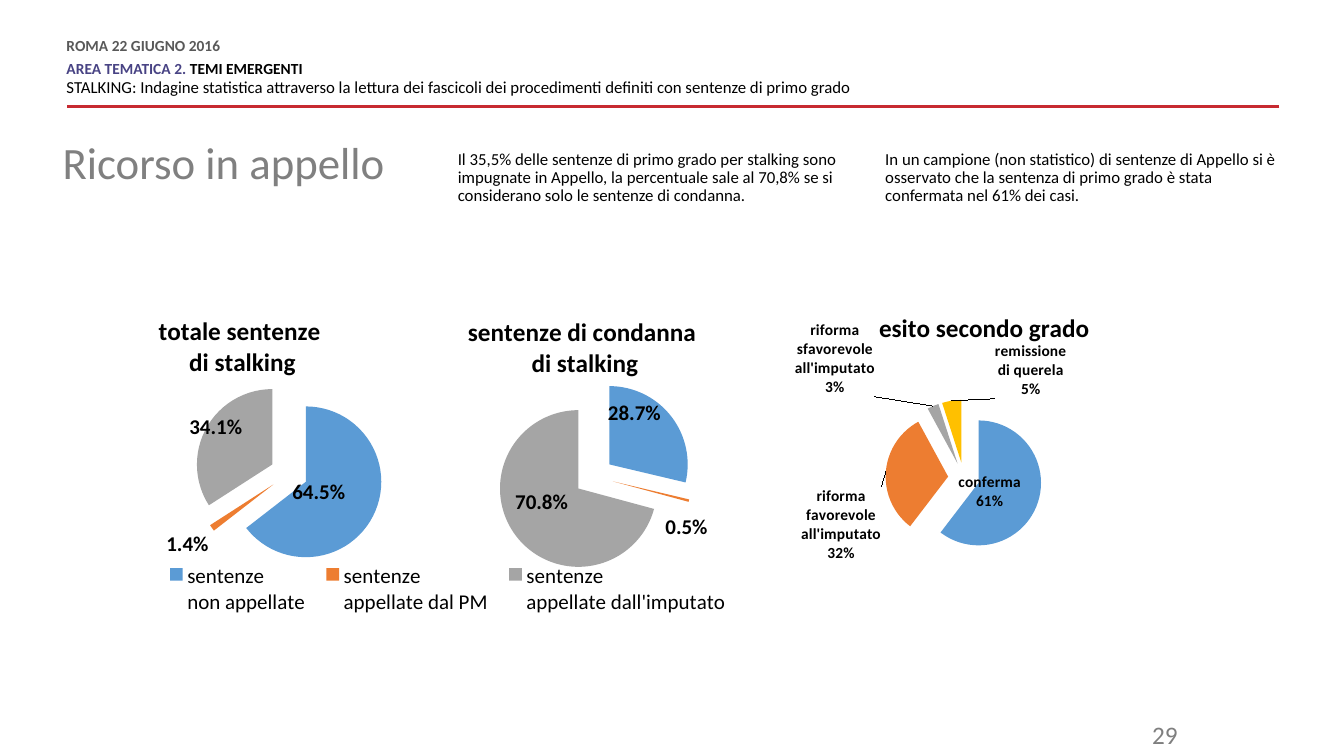
"""Build the slide on appeals against stalking sentences, with three exploded pies."""
import copy
import math

import pptx
import pptx.chart.data
import pptx.dml.color
import pptx.enum.chart
import pptx.enum.shapes
import pptx.enum.text
import pptx.oxml
import pptx.oxml.ns
import pptx.util

Inches, Pt = pptx.util.Inches, pptx.util.Pt
LABEL_POSITION = pptx.enum.chart.XL_LABEL_POSITION

THEME = {
    "font": "Calibri",
    "black": "000000", "heading": "808080", "number": "7F7F7F",
    "date": "595959", "area": "484384", "rule": "C72A31",
    "slices": ["5B9BD5", "ED7D31", "A5A5A5", "FFC000"],
    "date_size": 11, "body_size": 12, "heading_size": 32, "number_size": 18,
    "chart_title_size": 18, "legend_size": 15,
}
HEADER = [
    {"runs": [("ROMA 22 GIUGNO 2016", "date", "date_size", True)],
     "spacing": Pt(10.8), "after": 6},
    {"runs": [("AREA TEMATICA 2. ", "area", "date_size", True),
              ("TEMI EMERGENTI", "black", "date_size", True)],
     "spacing": Pt(10.8)},
    {"runs": [("STALKING: Indagine statistica attraverso la lettura dei fascicoli "
               "dei procedimenti definiti con sentenze di primo grado",
               "black", "body_size", False)],
     "spacing": Pt(10.8), "before": 3, "after": 6},
]
APPEALS = ("Il 35,5% delle sentenze di primo grado per stalking sono impugnate in "
           "Appello, la percentuale sale al 70,8% se si considerano solo le "
           "sentenze di condanna.")
OUTCOMES = ("In un campione (non statistico) di sentenze di Appello si è osservato "
            "che la sentenza di primo grado è stata confermata nel 61% dei casi.")
APPEAL_KINDS = ["sentenze \nnon appellate", "sentenze \nappellate dal PM",
                "sentenze \nappellate dall'imputato"]
EXPLOSION = 25

PIES = [
    {"title": ["totale sentenze ", "di stalking"], "title_at": (0.01, 0.08),
     "at": (1.48, 2.81, 6.3, 3.53), "plot": (0.01, 0.27, 0.42, 0.53),
     "categories": APPEAL_KINDS, "values": [64.5, 1.4, 34.1],
     "label_centers": [(3.16, 4.88), (1.86, 5.4), (2.14, 4.24)],
     "label_size": 15, "format": "0.0%", "label_boxes": None,
     "legend": (0.01, 0.77, 0.92, 0.18)},
    {"title": ["sentenze di condanna ", "di stalking"], "title_at": (0.01, 0.05),
     "at": (4.56, 2.95, 5.12, 2.99), "plot": (0.01, 0.27, 0.5, 0.65),
     "categories": ["1", "2", "3"], "values": [28.7, 0.5, 70.8],
     "label_centers": [(6.29, 4.1), (6.81, 5.23), (5.37, 4.98)],
     "label_size": 15, "format": "0.0%", "label_boxes": None, "legend": None},
    {"title": ["esito secondo grado"], "title_at": (0.26, 0),
     "at": (7.55, 3.03, 4.32, 3.23), "plot": (0.17, 0.29, 0.59, 0.48),
     "categories": ["conferma", "riforma\nfavorevole\nall'imputato",
                    "riforma\nsfavorevole\nall'imputato", "remissione\ndi querela"],
     "values": [61, 32, 3, 5],
     "label_centers": [(9.76, 4.86), (8.4, 5.21), (8.3, 3.61), (10.23, 3.73)],
     "label_size": 11, "format": '0"%"', "legend": None,
     "label_boxes": [(0.62, 0.38), (0.8, 0.76), (0.8, 0.76), (0.72, 0.57)]},
]


def color(name):
    return pptx.dml.color.RGBColor.from_string(THEME.get(name, name))


def style(font, tint, size, bold):
    font.name = THEME["font"]
    font.size = Pt(size)
    font.bold = bold
    font.color.rgb = color(tint)


def chart_xml(tag, body="", attributes=""):
    return pptx.oxml.parse_xml(
        f'<c:{tag} {pptx.oxml.ns.nsdecls("c")} {attributes}>{body}</c:{tag}>')


def set_layout(parent, index, values, inner=False):
    for old in parent.xpath("c:layout"):
        parent.remove(old)
    target = '<c:layoutTarget val="inner"/>' if inner else ""
    modes = '<c:xMode val="edge"/><c:yMode val="edge"/>'
    sides = "".join(f'<c:{key} val="{value}"/>' for key, value in zip("xywh", values))
    parent.insert(index, chart_xml(
        "layout", f"<c:manualLayout>{target}{modes}{sides}</c:manualLayout>"))


def add_text(slide, at, paragraphs, margins=(0, 0), align=None):
    box = slide.shapes.add_textbox(*map(Inches, at))
    frame = box.text_frame
    frame.word_wrap = True
    frame.margin_left = frame.margin_right = Inches(margins[0])
    frame.margin_top = frame.margin_bottom = Inches(margins[1])
    for index, entry in enumerate(paragraphs):
        para = frame.add_paragraph() if index else frame.paragraphs[0]
        para.alignment = align
        para.line_spacing = entry.get("spacing", 1.0)
        para.space_after = Pt(entry.get("after", 0))
        if index:
            para.space_before = Pt(entry.get("before", 0))
        for text, tint, size, bold in entry["runs"]:
            span = para.add_run()
            span.text = text
            style(span.font, tint, THEME[size], bold)


def label_offsets(pie):
    """Return label shifts from their default places, as fractions of the chart."""
    left, top, width, height = pie["at"]
    x, y, w, h = pie["plot"]
    center_x, center_y = left + (x + w / 2) * width, top + (y + h / 2) * height
    explode = EXPLOSION / 100
    radius = min(w * width, h * height) / 2 / (1 + explode)
    reach = radius * (explode + (1 if pie["label_boxes"] else 0.5))
    boxes = pie["label_boxes"] or [(0, 0)] * len(pie["values"])
    total, passed = sum(pie["values"]), 0
    for value, (label_x, label_y), box in zip(pie["values"], pie["label_centers"], boxes):
        angle = 2 * math.pi * (passed + value / 2) / total
        passed += value
        across, down = math.sin(angle), -math.cos(angle)
        level = abs(down) < math.sin(math.radians(5))
        start_x = center_x + reach * across + math.copysign(box[0] / 2, across)
        start_y = center_y + reach * down + (0 if level else math.copysign(box[1] / 2, down))
        yield round((label_x - start_x) / width, 3), round((label_y - start_y) / height, 3)


def add_labels(series, pie):
    named = pie["label_boxes"] is not None
    labels = series.data_labels
    style(labels.font, "black", pie["label_size"], True)
    labels.number_format = pie["format"]
    labels.number_format_is_linked = False
    labels.position = LABEL_POSITION.OUTSIDE_END if named else LABEL_POSITION.CENTER
    labels.show_value = labels.show_category_name = named
    labels.show_percentage = not named
    group = series._element.xpath("c:dLbls")[0]
    for leader in group.xpath("c:showLeaderLines"):
        group.remove(leader)
    group.append(chart_xml("separator", "\n"))
    shared = list(group)
    for index, (x, y) in enumerate(label_offsets(pie)):
        label = chart_xml("dLbl", f'<c:idx val="{index}"/><c:layout><c:manualLayout>'
                          f'<c:x val="{x}"/><c:y val="{y}"/></c:manualLayout></c:layout>')
        label.extend(copy.deepcopy(shared))
        group.insert(index, label)
    group.append(chart_xml("showLeaderLines", attributes=f'val="{int(named)}"'))


def add_pie(slide, pie):
    data = pptx.chart.data.CategoryChartData()
    data.categories = pie["categories"]
    data.add_series("Series 1", pie["values"])
    chart = slide.shapes.add_chart(pptx.enum.chart.XL_CHART_TYPE.PIE,
                                   *map(Inches, pie["at"]), data).chart
    style(chart.font, "black", 10, False)
    frame = chart.chart_title.text_frame
    for index, line in enumerate(pie["title"]):
        para = frame.add_paragraph() if index else frame.paragraphs[0]
        span = para.add_run()
        span.text = line
        style(span.font, "black", THEME["chart_title_size"], True)
    root = chart.element
    set_layout(root.xpath("c:chart/c:title")[0], 1, pie["title_at"])
    set_layout(root.xpath("c:chart/c:plotArea")[0], 0, pie["plot"], True)
    chart.has_legend = pie["legend"] is not None
    if chart.has_legend:
        chart.legend.position = pptx.enum.chart.XL_LEGEND_POSITION.RIGHT
        chart.legend.include_in_layout = False
        style(chart.legend.font, "black", THEME["legend_size"], False)
        set_layout(root.xpath("c:chart/c:legend")[0], 1, pie["legend"])
    chart.plots[0].vary_by_categories = True
    series = chart.plots[0].series[0]
    series._element.xpath("c:tx")[0].addnext(
        chart_xml("explosion", attributes=f'val="{EXPLOSION}"'))
    for index, tint in enumerate(THEME["slices"][:len(pie["values"])]):
        fill = series.points[index].format.fill
        fill.solid()
        fill.fore_color.rgb = color(tint)
    add_labels(series, pie)


def main():
    deck = pptx.Presentation()
    deck.slide_width, deck.slide_height = Inches(13.33), Inches(7.5)
    slide = deck.slides.add_slide(deck.slide_layouts[6])
    rule = slide.shapes.add_connector(pptx.enum.shapes.MSO_CONNECTOR.STRAIGHT,
                                      Inches(12.69), Inches(1.06), Inches(0.66), Inches(1.06))
    rule.line.color.rgb = color("rule")
    rule.line.width = Pt(2)
    rule._element.spPr.append(pptx.oxml.parse_xml(
        f'<a:effectLst {pptx.oxml.ns.nsdecls("a")}/>'))
    add_text(slide, (0.66, 0.39, 8.34, 0.59), HEADER)
    add_text(slide, (8.78, 7.09, 3, 0.4), [{"runs": [("29", "number", "number_size", False)]}],
             (0.1, 0.05), pptx.enum.text.PP_ALIGN.RIGHT)
    for at, text, tint, size in [
            ((8.78, 1.5, 3.92, 2.09), OUTCOMES, "black", "body_size"),
            ((4.54, 1.5, 3.91, 2.09), APPEALS, "black", "body_size"),
            ((0.62, 1.4, 3.92, 1.13), "Ricorso in appello", "heading", "heading_size")]:
        add_text(slide, at, [{"runs": [(text, tint, size, False)], "spacing": 0.9}])
    for pie in PIES:
        add_pie(slide, pie)
    deck.save("out.pptx")


main()
